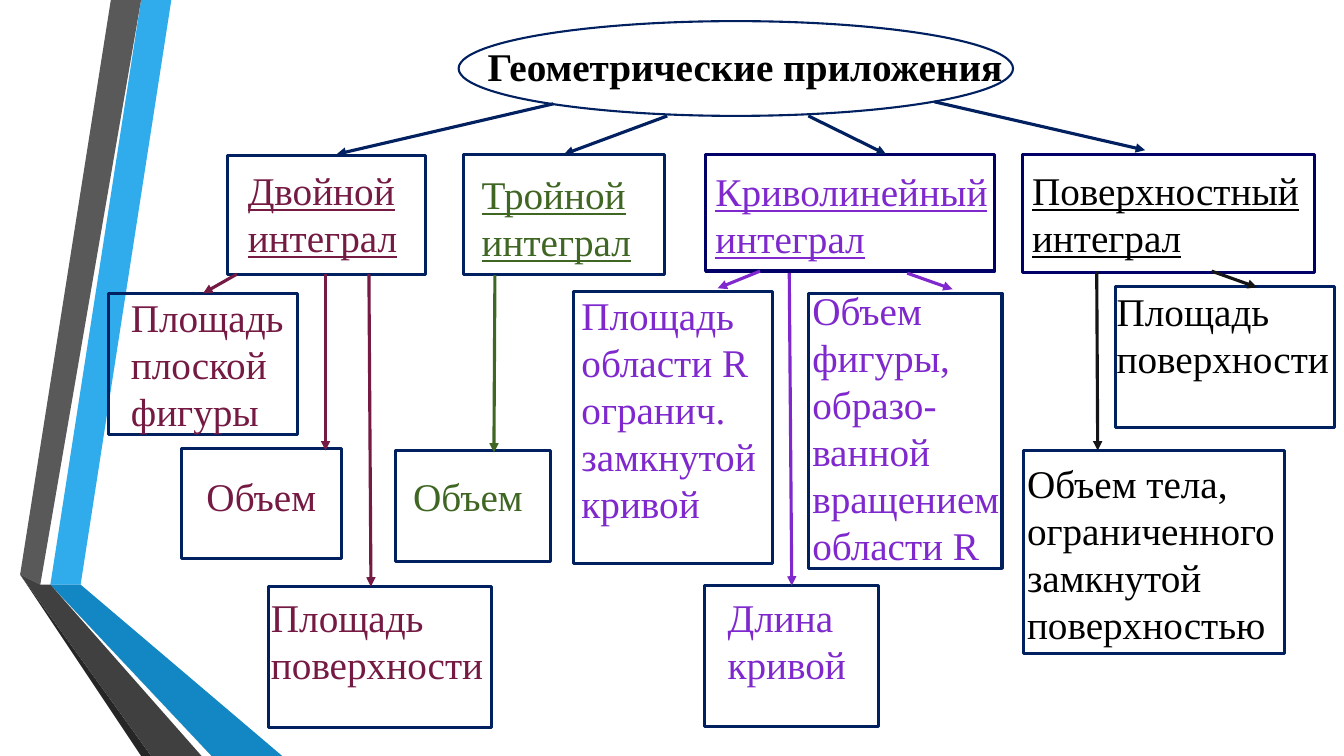
from lxml import etree
from pptx import Presentation
from pptx.dml.color import RGBColor as RGB
from pptx.enum.shapes import MSO_CONNECTOR as CONN, MSO_SHAPE as SHAPE
from pptx.enum.text import MSO_ANCHOR as ANCHOR, MSO_AUTO_SIZE as AUTO, PP_ALIGN as ALIGN
from pptx.oxml.ns import qn
from pptx.util import Inches, Pt

# One grid cell is a tenth of an inch
CELL = Inches(0.1)
COLS, ROWS = 133.33, 75
TOP = 0

COLORS = {
    "navy": "002060", "indigo": "000066", "wine": "751A43", "green": "3F6623",
    "violet": "7E28CD", "black": "000000", "ink": "141516",
    "sky": "30ACEC", "blue": "1287C3", "deep": "0C5A82",
    "grey": "595959", "dark": "404040", "shade": "262626",
}
FONT = {"name": "Times New Roman", "size": Pt(28), "bold": False}
FRAME = {"word_wrap": True, "auto_size": AUTO.SHAPE_TO_FIT_TEXT,
         "vertical_anchor": ANCHOR.TOP,
         "margin_left": CELL, "margin_right": CELL,
         "margin_top": CELL // 2, "margin_bottom": CELL // 2}


def cells(*values):
    return [round(v * CELL) for v in values]


def set_format(target, fmt):
    for key, value in fmt.items():
        setattr(target, key, value)


class Board:
    """Holds the style and the current slide."""

    def __init__(self, prs):
        self.slide = prs.slides.add_slide(prs.slide_layouts[5])
        self.shapes = self.slide.shapes

    def ribbon(self, color, points):
        start, *rest = points
        fb = self.shapes.build_freeform(*start, scale=CELL)
        fb.add_line_segments(rest, close=True)
        sp = fb.convert_to_shape()
        sp.shadow.inherit = False
        sp.fill.solid()
        sp.fill.fore_color.rgb = RGB.from_string(COLORS[color])
        sp.line.fill.background()

    def outline(self, at, color="navy", kind=SHAPE.RECTANGLE, width=2.25):
        sp = self.shapes.add_shape(kind, *cells(*at))
        sp.shadow.inherit = False
        sp.fill.background()
        sp.line.color.rgb = RGB.from_string(COLORS[color])
        sp.line.width = Pt(width)
        return sp

    def fill_text(self, tf, paragraphs, color, align=ALIGN.LEFT, **fmt):
        set_format(tf, FRAME)
        for i, text in enumerate(paragraphs):
            p = tf.add_paragraph() if i else tf.paragraphs[0]
            p.alignment = align
            r = p.add_run()
            r.text = text
            set_format(r.font, {**FONT, **fmt})
            r.font.color.rgb = RGB.from_string(COLORS[color])

    def title(self, at, text):
        sp = self.shapes.title
        set_format(sp, dict(zip(("left", "top", "width", "height"), cells(*at))))
        self.fill_text(sp.text_frame, [text], "black", ALIGN.CENTER, bold=True)

    def label(self, at, paragraphs, color, **fmt):
        sp = self.shapes.add_textbox(*cells(*at))
        self.fill_text(sp.text_frame, paragraphs, color, **fmt)

    def arrow(self, start, end, color, target=None):
        cx = self.shapes.add_connector(CONN.STRAIGHT, *cells(*start, *end))
        if target is not None:
            cx.end_connect(target, TOP)
        cx.line.color.rgb = RGB.from_string(COLORS[color])
        cx.line.width = Pt(2.25)
        props = cx.element.spPr
        etree.SubElement(props.get_or_add_ln(), qn("a:tailEnd"), type="triangle")
        etree.SubElement(props, qn("a:effectLst"))


# Side ribbon: fill, corner points
RIBBONS = [
    ("sky", [(5, 57.8), (7.7, 58.3), (17.3, 0), (14.5, 0)]),
    ("grey", [(13.9, 0), (11.1, 0), (1.6, 57.3), (4.4, 57.7)]),
    ("shade", [(1.6, 57.3), (14.5, 75), (15.1, 75)]),
    ("deep", [(5, 57.9), (20.8, 75), (21.4, 75)]),
    ("blue", [(5, 57.9), (21.4, 75), (28.3, 75), (7.7, 58.3), (5, 57.8)]),
    ("dark", [(20.2, 75), (4.8, 58.3), (4.3, 57.8), (4.4, 57.7), (1.6, 57.3), (15.1, 75)]),
]

# Integral types: name, box, box line, label area, text, text colour
INTEGRALS = [
    ("double", (22.6, 15.4, 19.6, 11.8), "navy", (23.6, 16, 17.2, 10.4),
     "Двойной интеграл", "wine"),
    ("triple", (46, 15.3, 19.9, 11.9), "navy", (46.8, 16.4, 17.7, 10.4),
     "Тройной интеграл", "green"),
    ("curve", (70, 15.3, 28.7, 11.6), "indigo", (70, 16.1, 30, 10.4),
     "Криволинейный интеграл", "violet"),
    ("surface", (101.4, 15.3, 29, 11.7), "indigo", (101.4, 16, 28.6, 10.4),
     "Поверхностный интеграл", "black"),
]

# Applications: name, box, label area, paragraphs, text colour
APPLICATIONS = [
    ("plane area", (10.8, 29.1, 18.7, 14), (12, 28.6, 17.5, 15.3),
     ["Площадь плоской фигуры"], "wine"),
    ("double volume", (18, 44.5, 15.9, 10.9), (19.5, 46.4, 13.9, 5.7), ["Объем"], "wine"),
    ("double surface", (26.6, 58.2, 22.2, 14), (25.9, 58.4, 23.7, 10.4),
     ["Площадь поверхности"], "wine"),
    ("triple volume", (39.2, 44.7, 15.4, 11), (40, 46.4, 13.9, 5.7), ["Объем"], "green"),
    ("region area", (56.9, 28.9, 19.7, 27), (56.7, 28.4, 19.6, 24.6),
     ["Площадь области R огранич.", "замкнутой кривой"], "violet"),
    ("curve length", (69.9, 58.1, 17.3, 14), (71.2, 58.4, 15.2, 10.4),
     ["Длина кривой"], "violet"),
    ("rotation volume", (80.2, 29.1, 19.2, 27.3), (79.6, 27.9, 21.2, 29.3),
     ["Объем фигуры, образо-ванной вращением области R"], "violet"),
    ("surface area", (110.7, 28.4, 21.7, 14), (109.8, 28, 23.3, 10.4),
     ["Площадь поверхности"], "black"),
    ("body volume", (101.5, 44.7, 25.9, 20.1), (100.9, 45.1, 27.2, 19.9),
     ["Объем тела, ограниченного замкнутой поверхностью"], "black"),
]

# Arrows: start, end, colour, box joined at the middle of its top side
ARROWS = [
    ((54.9, 10.3), (33.4, 15.3), "navy", None),
    ((66.2, 11.5), (56.2, 15.3), "navy", "triple"),
    ((80.2, 11.5), (87.9, 15.3), "navy", None),
    ((92.7, 10.1), (113.6, 14.9), "navy", None),
    ((32.3, 27.2), (32.3, 44.7), "wine", None),
    ((36.6, 27.2), (36.8, 58.2), "wine", None),
    ((23.5, 27.2), (20.1, 29.1), "wine", "plane area"),
    ((49.1, 27.3), (49, 44.9), "green", None),
    ((75.4, 26.9), (71.2, 28.6), "violet", None),
    ((78.3, 27.1), (78.5, 58.2), "violet", "curve length"),
    ((90, 27.1), (94.5, 28.7), "violet", None),
    ((120.2, 26.9), (124.7, 28.5), "ink", None),
    ((108.8, 26.9), (108.9, 44.7), "ink", None),
]


def main():
    prs = Presentation()
    prs.slide_width, prs.slide_height = cells(COLS, ROWS)
    board = Board(prs)

    # Side ribbon
    for color, points in RIBBONS:
        board.ribbon(color, points)

    # Heading
    board.outline((45.5, 2.1, 55, 9.4), kind=SHAPE.OVAL, width=1.5)
    board.title((47.3, 3.7, 53.2, 5.7), "Геометрические приложения")

    # Boxes and their labels
    boxes = {}
    for name, box, line, area, text, color in INTEGRALS:
        boxes[name] = board.outline(box, line)
        board.label(area, [text], color, underline=True)
    for name, box, area, paragraphs, color in APPLICATIONS:
        boxes[name] = board.outline(box)
        board.label(area, paragraphs, color)

    # Arrows
    for start, end, color, target in ARROWS:
        board.arrow(start, end, color, boxes.get(target))

    prs.save("out.pptx")


if __name__ == "__main__":
    main()
